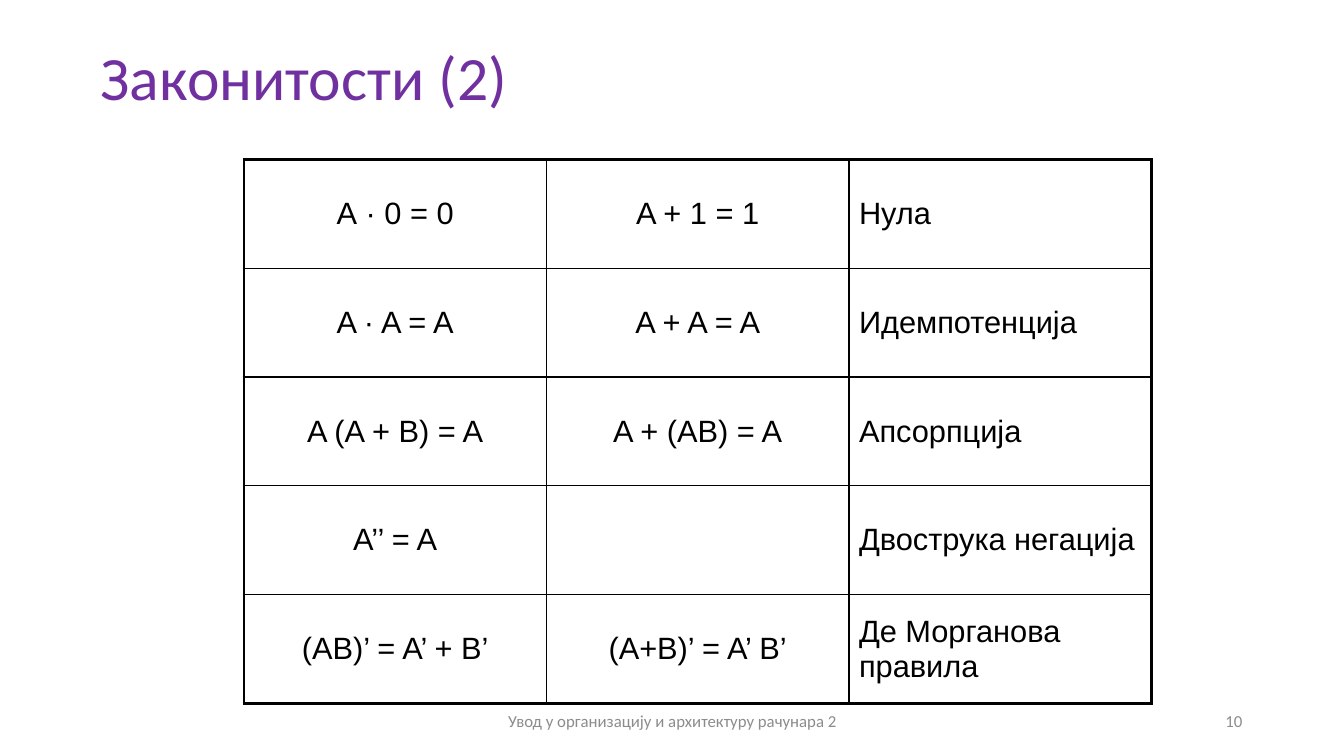
import pptx
import pptx.util
import pptx.dml.color
import pptx.enum.text
import pptx.oxml
import pptx.oxml.ns

Inches = pptx.util.Inches
Pt = pptx.util.Pt
Align = pptx.enum.text.PP_ALIGN
Middle = pptx.enum.text.MSO_ANCHOR.MIDDLE
PURPLE = pptx.dml.color.RGBColor(0x70, 0x30, 0xA0)
GRAY = pptx.dml.color.RGBColor(0x8C, 0x8C, 0x8C)
BLACK = pptx.dml.color.RGBColor(0, 0, 0)
NS = pptx.oxml.ns.nsdecls("a")

LAWS = [
    ("А · 0 = 0", "A + 1 = 1", "Нула"),
    ("A · A = A", "A + A = A", "Идемпотенција"),
    ("A (A + B) = A", "A + (AB) = A", "Апсорпција"),
    ("A’’ = A", "", "Двострука негација"),
    ("(AB)’ = A’ + B’", "(A+B)’ = A’ B’", "Де Морганова правила"),
]


class Deck:
    """Hold the style and the current slide, and draw its elements."""

    def __init__(self):
        self.show = pptx.Presentation()
        self.show.slide_width = Inches(13.33)
        self.show.slide_height = Inches(7.5)
        self.slide = self.show.slides.add_slide(self.show.slide_layouts[6])
        self.head = "Calibri"
        self.body = "Arial"

    def style(self, para, face, size, color, align):
        para.alignment = align
        for run in para.runs:
            run.font.name = face
            run.font.size = Pt(size)
            run.font.color.rgb = color

    def text(self, words, left, top, width, height, size, color, align):
        box = self.slide.shapes.add_textbox(
            Inches(left), Inches(top), Inches(width), Inches(height))
        frame = box.text_frame
        frame.word_wrap = True
        frame.vertical_anchor = Middle
        frame.text = words
        self.style(frame.paragraphs[0], self.head, size, color, align)
        return frame.paragraphs[0]

    def title(self, words):
        para = self.text(words, 0.9, 0.2, 11.22, 1.2, 44, PURPLE, Align.LEFT)
        para.line_spacing = 0.9
        glow = pptx.oxml.parse_xml(
            f'<a:effectLst {NS}><a:outerShdw blurRad="38100" dist="38100" '
            'dir="8100000" algn="tr" rotWithShape="0"><a:srgbClr val="000000">'
            '<a:alpha val="40000"/></a:srgbClr></a:outerShdw></a:effectLst>')
        props = para.runs[0].font._element
        props.insert(1, glow)

    def border(self, cell, widths):
        props = cell._tc.get_or_add_tcPr()
        for spot, (side, width) in enumerate(widths.items()):
            line = pptx.oxml.parse_xml(
                f'<a:ln{side} {NS} w="{Pt(width)}"><a:solidFill>'
                f'<a:srgbClr val="{BLACK}"/></a:solidFill></a:ln{side}>')
            props.insert(spot, line)

    def table(self, rows, left, top, wide, high):
        last_row, last_col = len(rows) - 1, len(rows[0]) - 1
        grid = self.slide.shapes.add_table(
            len(rows), len(rows[0]), Inches(left), Inches(top),
            Inches(wide * len(rows[0])), Inches(high * len(rows))).table
        grid.first_row = grid.horz_banding = False
        for col in grid.columns:
            col.width = Inches(wide)
        for r, row in enumerate(rows):
            grid.rows[r].height = Inches(high)
            for c, words in enumerate(row):
                cell = grid.cell(r, c)
                cell.text = words
                cell.vertical_anchor = Middle
                cell.fill.background()
                align = Align.LEFT if c == last_col else Align.CENTER
                self.style(cell.text_frame.paragraphs[0], self.body, 22,
                           BLACK, align)
                edges = {"L": c == 0, "R": c == last_col,
                         "T": r == 0, "B": r == last_row}
                self.border(cell, {side: 2.25 if outer else 1
                                   for side, outer in edges.items()})


def main():
    deck = Deck()
    deck.title("Законитости (2)")
    deck.table(LAWS, 2.42, 1.58, 3, 1.08)
    deck.text("10", 9.42, 6.95, 3, 0.4, 12, GRAY, Align.RIGHT)
    deck.text("Увод у организацију и архитектуру рачунара 2",
              4.42, 6.95, 4.5, 0.4, 12, GRAY, Align.CENTER)
    deck.show.save("out.pptx")


if __name__ == "__main__":
    main()
